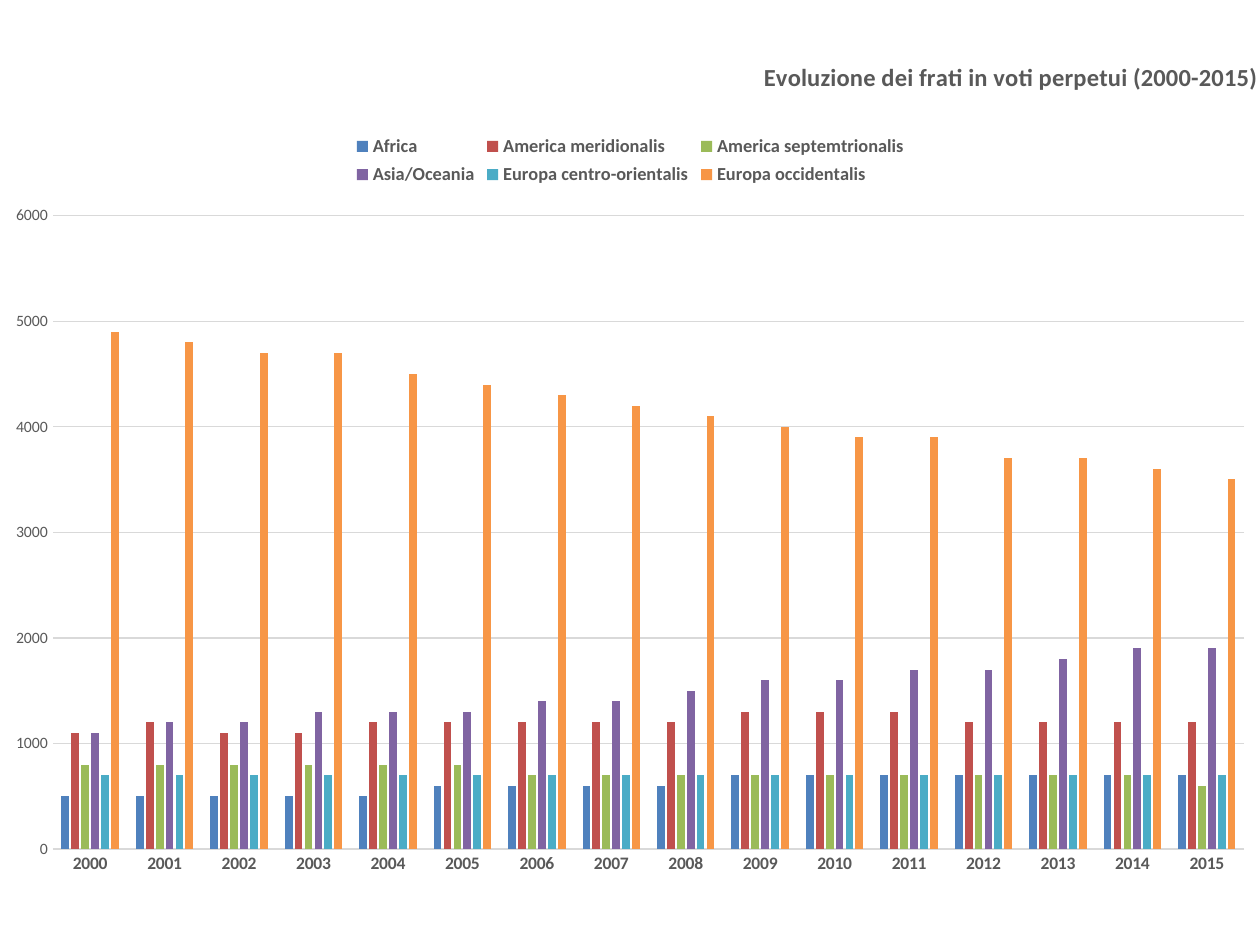
from lxml import etree
from pptx import Presentation
from pptx.chart.data import CategoryChartData
from pptx.dml.color import RGBColor
from pptx.enum.chart import XL_CHART_TYPE, XL_LEGEND_POSITION, XL_TICK_MARK
from pptx.oxml.ns import qn
from pptx.util import Pt

CLUSTERED = XL_CHART_TYPE.COLUMN_CLUSTERED
LEGEND_TOP = XL_LEGEND_POSITION.TOP
NO_TICK = XL_TICK_MARK.NONE

FONT = "Calibri"
CHART_WIDTH, CHART_HEIGHT = 730.8, 477.36
COLORS = {
    "text": "595959",
    "grid": "D9D9D9",
    "Africa": "4F81BD",
    "America meridionalis": "C0504D",
    "America septemtrionalis": "9BBB59",
    "Asia/Oceania": "8064A2",
    "Europa centro-orientalis": "4BACC6",
    "Europa occidentalis": "F79646",
}
FRIARS = {
    "Africa": [500, 500, 500, 500, 500, 600, 600, 600,
               600, 700, 700, 700, 700, 700, 700, 700],
    "America meridionalis": [1100, 1200, 1100, 1100, 1200, 1200, 1200, 1200,
                             1200, 1300, 1300, 1300, 1200, 1200, 1200, 1200],
    "America septemtrionalis": [800, 800, 800, 800, 800, 800, 700, 700,
                                700, 700, 700, 700, 700, 700, 700, 600],
    "Asia/Oceania": [1100, 1200, 1200, 1300, 1300, 1300, 1400, 1400,
                     1500, 1600, 1600, 1700, 1700, 1800, 1900, 1900],
    "Europa centro-orientalis": [700] * 16,
    "Europa occidentalis": [4900, 4800, 4700, 4700, 4500, 4400, 4300, 4200,
                            4100, 4000, 3900, 3900, 3700, 3700, 3600, 3500],
}


def style_font(font, size, bold):
    font.name = FONT
    font.size = Pt(size)
    font.bold = bold
    font.color.rgb = RGBColor.from_string(COLORS["text"])


def place(element, position, left, top, width=None, height=None, target=None):
    """Give a chart part a manual layout, from points within the chart."""
    for old_layout in element.findall(qn("c:layout")):
        element.remove(old_layout)
    settings = {"layoutTarget": target, "xMode": "edge", "yMode": "edge",
                "x": left / CHART_WIDTH, "y": top / CHART_HEIGHT}
    if width:
        settings.update(w=width / CHART_WIDTH, h=height / CHART_HEIGHT)
    layout = etree.Element(qn("c:layout"))
    manual = etree.SubElement(layout, qn("c:manualLayout"))
    for name, value in settings.items():
        if value is not None:
            etree.SubElement(manual, qn("c:" + name)).set("val", str(value))
    element.insert(position, layout)


presentation = Presentation()
presentation.slide_width = Pt(720)
presentation.slide_height = Pt(540)
slide = presentation.slides.add_slide(presentation.slide_layouts[6])

# Chart data
chart_data = CategoryChartData()
chart_data.categories = [str(year) for year in range(2000, 2016)]
for region, values in FRIARS.items():
    chart_data.add_series(region, values)
chart = slide.shapes.add_chart(
    CLUSTERED, Pt(-5.76), Pt(30.96), Pt(CHART_WIDTH), Pt(CHART_HEIGHT), chart_data).chart
chart.font.name = FONT
chart.font.size = Pt(10)

# Title, to the right
chart.has_title = True
title_frame = chart.chart_title.text_frame
title_frame.text = "Evoluzione dei frati in voti perpetui (2000-2015)"
style_font(title_frame.paragraphs[0].runs[0].font, 14, True)
chart.chart_title.include_in_layout = False
place(chart.chart_title._element, 1, left=439.7, top=0.8)

# Legend in two rows
chart.has_legend = True
legend = chart.legend
legend.position = LEGEND_TOP
legend.include_in_layout = False
style_font(legend.font, 10.5, True)
place(legend._element, 1, left=206, top=43, width=320, height=35.5)

# Columns
plot = chart.plots[0]
plot.gap_width = 219
plot.overlap = -27
plot.vary_by_categories = False
for series in plot.series:
    series.format.fill.solid()
    series.format.fill.fore_color.rgb = RGBColor.from_string(COLORS[series.name])
plot_area = chart._chartSpace.chart.plotArea
place(plot_area, 0, left=36, top=92.3, width=680.7, height=362, target="inner")

# Axes
years, counts = chart.category_axis, chart.value_axis
for axis in (years, counts):
    axis.major_tick_mark = NO_TICK
    axis.minor_tick_mark = NO_TICK
style_font(years.tick_labels.font, 10, True)
style_font(counts.tick_labels.font, 9, False)
counts.minimum_scale = 0
counts.maximum_scale = 6000
counts.major_unit = 1000
counts.has_major_gridlines = True
counts.format.line.fill.background()
for line in (years.format.line, counts.major_gridlines.format.line):
    line.width = Pt(0.75)
    line.color.rgb = RGBColor.from_string(COLORS["grid"])

presentation.save("out.pptx")
